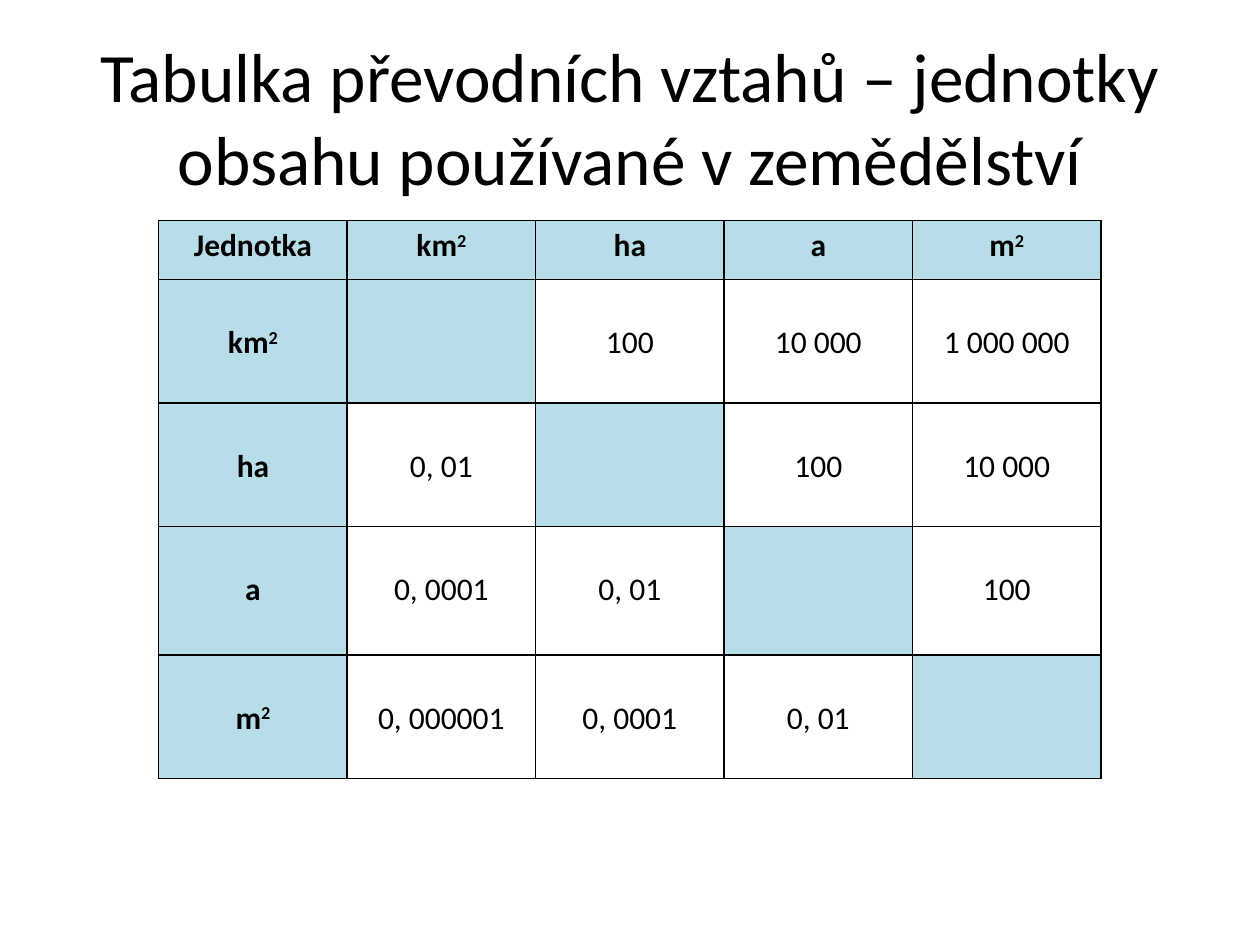
"""Build a slide with a conversion table of area units used in farming."""
from typing import NamedTuple

from lxml import etree
from pptx import Presentation
from pptx.dml.color import RGBColor
from pptx.enum.text import MSO_ANCHOR, MSO_AUTO_SIZE, PP_ALIGN
from pptx.oxml.ns import qn
from pptx.util import Inches, Pt

CENTER = PP_ALIGN.CENTER
TOP, MIDDLE = MSO_ANCHOR.TOP, MSO_ANCHOR.MIDDLE
NO_AUTOFIT = MSO_AUTO_SIZE.NONE
BLACK, PALE_BLUE = "000000", "B7DEE8"
TITLE_ONLY = 5


class Label(NamedTuple):
    text: str
    power: str = ""


UNITS = [Label("km", "2"), Label("ha"), Label("a"), Label("m", "2")]
FACTORS = [
    ["", "100", "10 000", "1 000 000"],
    ["0, 01", "", "100", "10 000"],
    ["0, 0001", "0, 01", "", "100"],
    ["0, 000001", "0, 0001", "0, 01", ""],
]
COLUMN_WIDTH = 7.48 / 5
ROW_HEIGHTS = [0.47, 0.98, 0.98, 1.02, 0.98]


def rgb(color: str) -> RGBColor:
    return RGBColor.from_string(color)


def write(frame, text: str, *, power: str = "", size: float = 18, bold: bool = False) -> None:
    paragraph = frame.paragraphs[0]
    paragraph.alignment = CENTER
    for part in filter(None, (text, power)):
        run = paragraph.add_run()
        run.text = part
        run.font.name = "Calibri"
        run.font.size = Pt(size)
        run.font.bold = bold
        run.font.color.rgb = rgb(BLACK)
    if power:
        run.font._element.set("baseline", "30000")


def draw_borders(cell, color: str = BLACK, width: float = 1) -> None:
    properties = cell._tc.get_or_add_tcPr()
    for side in ("lnL", "lnR", "lnT", "lnB"):
        line = etree.SubElement(properties, qn(f"a:{side}"), w=str(Pt(width)))
        fill = etree.SubElement(line, qn("a:solidFill"))
        etree.SubElement(fill, qn("a:srgbClr"), val=color)


def draw_cell(cell, label: Label, *, heading: bool, margin_top: float) -> None:
    draw_borders(cell)
    cell.vertical_anchor = TOP
    cell.margin_top = Inches(margin_top)
    if heading or not label.text:
        cell.fill.solid()
        cell.fill.fore_color.rgb = rgb(PALE_BLUE)
    else:
        cell.fill.background()
    write(cell.text_frame, label.text, power=label.power, bold=heading)


def draw_title(slide, text: str) -> None:
    title = slide.shapes.title
    title.left, title.top = Inches(0.5), Inches(0.3)
    title.width, title.height = Inches(9), Inches(1.25)
    title.text_frame.word_wrap = True
    title.text_frame.auto_size = NO_AUTOFIT
    title.text_frame.vertical_anchor = MIDDLE
    write(title.text_frame, text, size=39.6)


def draw_conversions(slide) -> None:
    rows = [[Label("Jednotka"), *UNITS]]
    rows += [[unit, *map(Label, factors)] for unit, factors in zip(UNITS, FACTORS)]
    table = slide.shapes.add_table(
        len(rows), len(rows[0]), Inches(1.26), Inches(1.75),
        Inches(7.48), Inches(sum(ROW_HEIGHTS)),
    ).table
    table.first_row = table.horz_banding = False
    for column in table.columns:
        column.width = Inches(COLUMN_WIDTH)
    for r, (labels, height) in enumerate(zip(rows, ROW_HEIGHTS)):
        table.rows[r].height = Inches(height)
        for c, label in enumerate(labels):
            draw_cell(table.cell(r, c), label, heading=r == 0 or c == 0,
                      margin_top=0.35 if r else 0.05)


def main() -> None:
    deck = Presentation()
    deck.slide_width, deck.slide_height = Inches(10), Inches(7.5)
    slide = deck.slides.add_slide(deck.slide_layouts[TITLE_ONLY])
    draw_title(slide, "Tabulka převodních vztahů – jednotky obsahu používané v zemědělství")
    draw_conversions(slide)
    deck.save("out.pptx")


if __name__ == "__main__":
    main()
